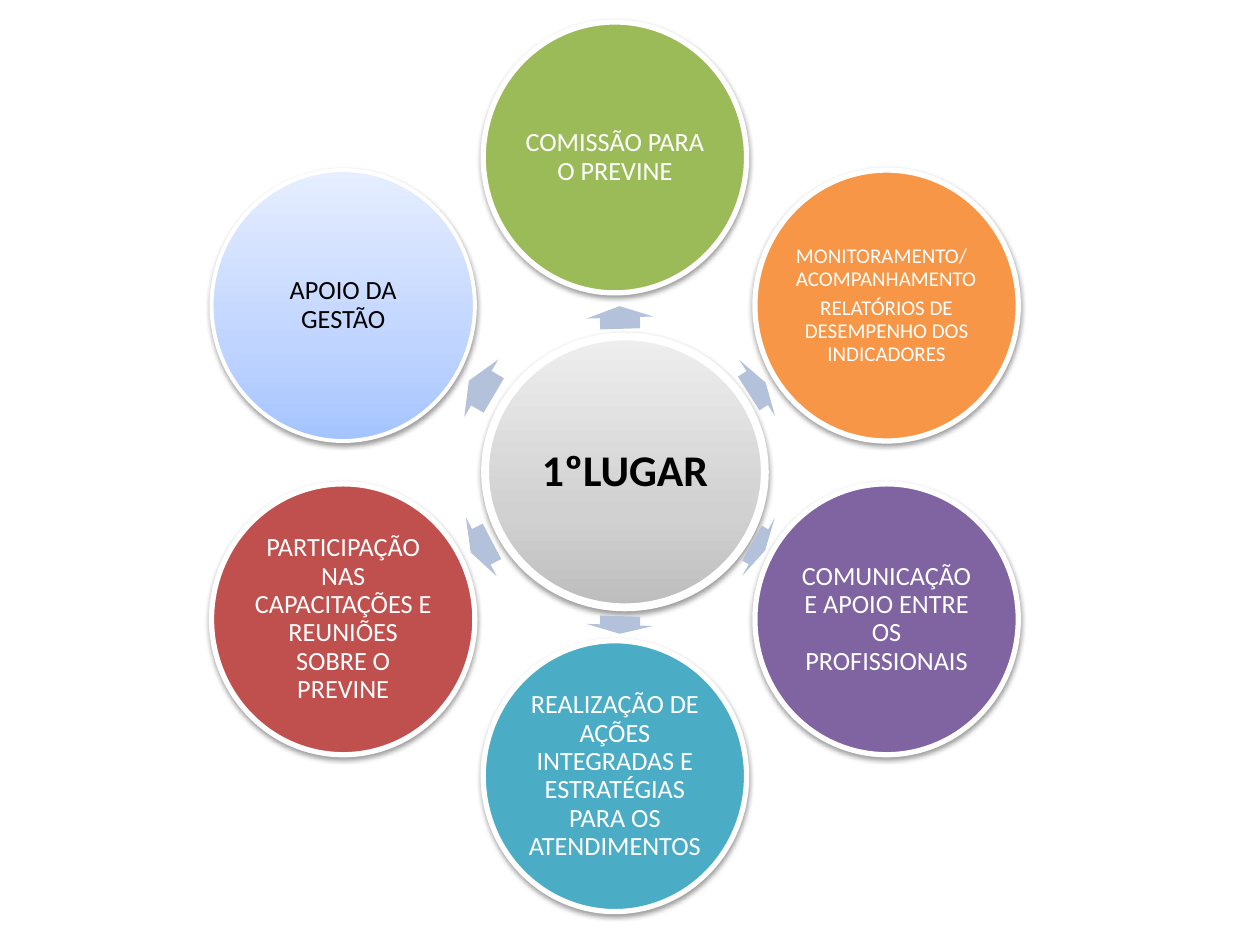
import copy
import math

from pptx import Presentation
from pptx.dml.color import RGBColor
from pptx.enum.shapes import MSO_SHAPE
from pptx.enum.text import MSO_ANCHOR, PP_ALIGN
from pptx.oxml import parse_xml
from pptx.oxml.ns import nsdecls, qn
from pptx.util import Inches, Pt

OVAL, ARROW = MSO_SHAPE.OVAL, MSO_SHAPE.RIGHT_ARROW
CENTER, LEFT = PP_ALIGN.CENTER, PP_ALIGN.LEFT
MIDDLE = MSO_ANCHOR.MIDDLE

COLORS = {
    "white": "FFFFFF", "black": "000000", "arrow": "B3C1DB",
    "green": "9BBB59", "orange": "F79646", "purple": "8064A2",
    "teal": "4BACC6", "red": "C0504D",
}
GRAY_GRADIENT = [(0, "BDBDBD"), (0.35, "D1D1D1"), (1, "EEEEEE")]
BLUE_GRADIENT = [(0, "A4C4FF"), (0.35, "BFD4FF"), (1, "E6EEFF")]

CIRCLE_W, CIRCLE_H = 2.09, 2.15
RING_X, RING_Y, RING_RADIUS = 4.88, 3.67, 2.49
TOP_DROP = 0.07  # the top circle sits slightly inside the ring
ARROW_SPAN = 0.53

# Clockwise from the top: fill, font size, paragraphs
CIRCLES = [
    (COLORS["green"], 15, [("COMISSÃO PARA O PREVINE", CENTER)]),
    (COLORS["orange"], 12, [
        ("MONITORAMENTO/ACOMPANHAMENTO", LEFT),
        ("RELATÓRIOS DE DESEMPENHO DOS INDICADORES", CENTER)]),
    (COLORS["purple"], 15,
     [("COMUNICAÇÃO E APOIO ENTRE OS PROFISSIONAIS", CENTER)]),
    (COLORS["teal"], 15, [
        ("REALIZAÇÃO DE AÇÕES INTEGRADAS E ESTRATÉGIAS PARA OS ATENDIMENTOS",
         CENTER)]),
    (COLORS["red"], 15, [
        ("PARTICIPAÇÃO NAS CAPACITAÇÕES E REUNIÕES SOBRE O PREVINE", CENTER)]),
    (BLUE_GRADIENT, 15, [("APOIO DA GESTÃO", CENTER)]),
]
# Centre x, centre y, length, rotation
ARROWS = [
    (4.92, 2.52, 0.18, 268.2), (6.01, 3.08, 0.16, 327.6),
    (6.02, 4.34, 0.12, 29.3), (4.92, 4.96, 0.14, 91.8),
    (3.82, 4.34, 0.19, 152.4), (3.82, 3.08, 0.23, 210.6),
]


def rgb(value):
    return RGBColor.from_string(value)


def set_fill(sp, fill):
    """Fill with one hex colour, or with gradient stops from bottom to top."""
    if isinstance(fill, str):
        sp.fill.solid()
        sp.fill.fore_color.rgb = rgb(fill)
        return
    sp.fill.gradient()
    sp.fill.gradient_angle = 90
    stops = sp._element.spPr.find(".//" + qn("a:gsLst"))
    stops.append(copy.deepcopy(stops[0]))
    for stop, (position, color) in zip(sp.fill.gradient_stops, fill):
        stop.position = position
        stop.color.rgb = rgb(color)


def add_soft_shadow(sp):
    sp._element.spPr.find(qn("a:effectLst")).append(parse_xml(
        f'<a:outerShdw {nsdecls("a")} blurRad="{Pt(3.1)}" dist="{Pt(1.6)}" '
        'dir="5400000" rotWithShape="0"><a:srgbClr val="000000">'
        '<a:alpha val="38000"/></a:srgbClr></a:outerShdw>'))


def add_circle(s, box, fill, line_width, paragraphs, size, color,
               bold=False, inset=0.02):
    sp = s.shapes.add_shape(OVAL, *map(Inches, box))
    set_fill(sp, fill)
    sp.line.color.rgb = rgb(COLORS["white"])
    sp.line.width = Pt(line_width)
    sp.shadow.inherit = False
    add_soft_shadow(sp)
    tf = sp.text_frame
    tf.word_wrap = True
    tf.vertical_anchor = MIDDLE
    tf.margin_left = tf.margin_right = Inches(inset)
    tf.margin_top = tf.margin_bottom = Inches(inset)
    for i, (text, align) in enumerate(paragraphs):
        p = tf.add_paragraph() if i else tf.paragraphs[0]
        p.text = text
        p.alignment = align
        p.line_spacing = 0.9
        p.space_before = Pt(4 if i else 0)
        p.font.name = "Calibri"
        p.font.size = Pt(size)
        p.font.bold = bold
        p.font.color.rgb = rgb(color)


def add_arrow(s, x, y, length, rotation):
    """Add a block arrow centred on x, y."""
    sp = s.shapes.add_shape(
        ARROW, Inches(x - length / 2), Inches(y - ARROW_SPAN / 2),
        Inches(length), Inches(ARROW_SPAN))
    sp.adjustments[0], sp.adjustments[1] = 0.6, 0.5
    sp.rotation = rotation
    set_fill(sp, COLORS["arrow"])
    sp.line.fill.background()
    sp.shadow.inherit = False


def add_ring(s, cx, cy, radius):
    for i, (arrow, (fill, size, paragraphs)) in enumerate(zip(ARROWS, CIRCLES)):
        add_arrow(s, *arrow)
        angle = math.radians(60 * i)
        x = cx + radius * math.sin(angle) - CIRCLE_W / 2
        y = cy - radius * math.cos(angle) - CIRCLE_H / 2
        if i == 0:
            y += TOP_DROP
        solid = isinstance(fill, str)
        add_circle(s, (x, y, CIRCLE_W, CIRCLE_H), fill, 3 if solid else 2.25,
                   paragraphs, size, COLORS["white" if solid else "black"])


def main():
    prs = Presentation()
    prs.slide_width, prs.slide_height = Inches(10), Inches(7.5)
    s = prs.slides.add_slide(prs.slide_layouts[6])
    add_circle(s, (3.85, 2.67, 2.22, 2.15), GRAY_GRADIENT, 4.5,
               [("1ºLUGAR", CENTER)], 25, COLORS["black"],
               bold=True, inset=0.03)
    add_ring(s, RING_X, RING_Y, RING_RADIUS)
    prs.save("out.pptx")


if __name__ == "__main__":
    main()
